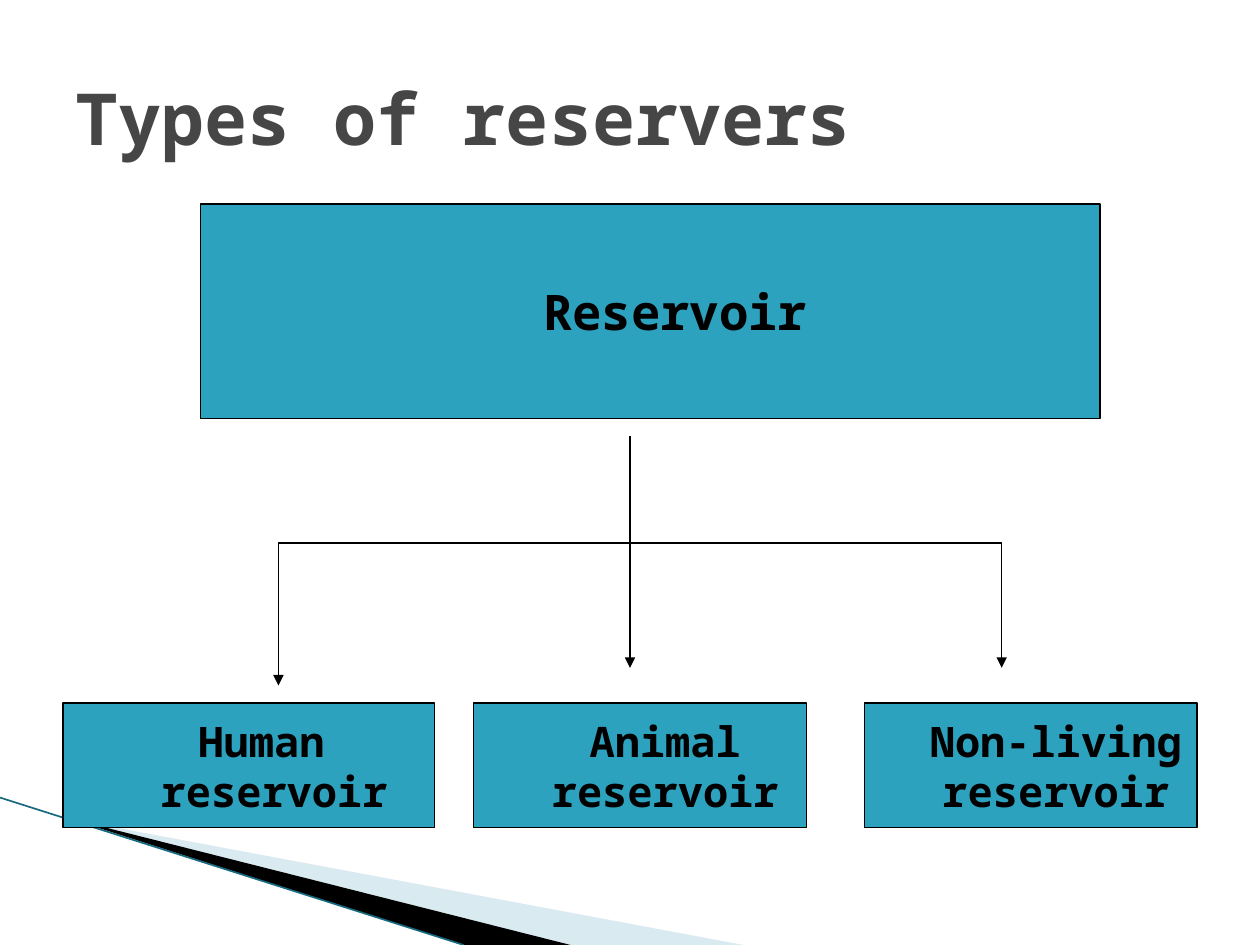
import pptx
import pptx.util
import pptx.dml.color
import pptx.enum.shapes
import pptx.enum.text
import pptx.oxml.ns
from dataclasses import dataclass
from lxml import etree

Inches = pptx.util.Inches
Pt = pptx.util.Pt
RGB = pptx.dml.color.RGBColor.from_string
Align = pptx.enum.text.PP_ALIGN
Anchor = pptx.enum.text.MSO_ANCHOR
qn = pptx.oxml.ns.qn


@dataclass(frozen=True)
class Theme:
    face: str = "Noto Sans Mono"
    title: str = "464646"
    ink: str = "000000"
    box: str = "2DA2BF"
    pale: str = "A0CBDC"
    edge: str = "17697F"
    big: int = 41
    mid: int = 28
    small: int = 24
    line: float = 0.75


THEME = Theme()


def style(frame, size, color, align):
    frame.vertical_anchor = Anchor.MIDDLE
    frame.word_wrap = True
    for para in frame.paragraphs:
        para.alignment = align
        for run in para.runs:
            run.font.name = THEME.face
            run.font.size = Pt(size)
            run.font.bold = True
            run.font.color.rgb = RGB(color)


def add_title(slide, text):
    title = slide.shapes.title
    title.left, title.top = Inches(0.5), Inches(0.3)
    title.width, title.height = Inches(9), Inches(1.25)
    title.text_frame.text = text
    style(title.text_frame, THEME.big, THEME.title, Align.LEFT)


def add_box(slide, left, top, width, height, text, size):
    box = slide.shapes.add_shape(
        pptx.enum.shapes.MSO_SHAPE.RECTANGLE,
        Inches(left), Inches(top), Inches(width), Inches(height))
    box.shadow.inherit = False
    box.fill.solid()
    box.fill.fore_color.rgb = RGB(THEME.box)
    box.line.color.rgb = RGB(THEME.ink)
    box.line.width = Pt(THEME.line)
    frame = box.text_frame
    # The labels sit 0.2 inch right of the box centre
    frame.margin_left, frame.margin_right = Inches(0.4), 0
    frame.text = text
    style(frame, size, THEME.ink, Align.CENTER)


def add_line(slide, start, end, color=THEME.ink, width=THEME.line, arrow=False):
    line = slide.shapes.add_connector(
        pptx.enum.shapes.MSO_CONNECTOR.STRAIGHT,
        *(Inches(n) for n in start + end))
    line.line.color.rgb = RGB(color)
    line.line.width = Pt(width)
    if arrow:
        etree.SubElement(line.line._get_or_add_ln(), qn("a:tailEnd"),
                         type="triangle")
    etree.SubElement(line._element.spPr, qn("a:effectLst"))


def add_wedge(slide, points, color, alpha=100):
    spots = [(Inches(x), Inches(y)) for x, y in points]
    build = slide.shapes.build_freeform(*spots[0])
    build.add_line_segments(spots[1:], close=True)
    wedge = build.convert_to_shape()
    wedge.shadow.inherit = False
    wedge.fill.solid()
    wedge.fill.fore_color.rgb = RGB(color)
    wedge.line.fill.background()
    if alpha < 100:
        tint = wedge._element.spPr.find(".//" + qn("a:srgbClr"))
        etree.SubElement(tint, qn("a:alpha"), val=str(alpha * 1000))


def main():
    deck = pptx.Presentation()
    deck.slide_width, deck.slide_height = Inches(10), Inches(7.5)
    slide = deck.slides.add_slide(deck.slide_layouts[5])

    # Corner wedges
    add_wedge(slide, [(0.55, 6.5), (5.9, 7.5), (4.53, 7.5)], THEME.pale, 40)
    add_wedge(slide, [(0.53, 6.49), (4.53, 7.5), (3.68, 7.5)], THEME.ink)
    add_line(slide, (0, 6.33), (3.68, 7.5), THEME.edge, 0.95)

    add_title(slide, "Types of reservers")

    # Root of the tree
    add_box(slide, 1.59, 1.62, 7.14, 1.7, "Reservoir", THEME.mid)

    # Branches: trunk, crossbar and one arrow per kind
    fork = 4.31
    tips = [(2.21, 5.44), (5, 5.3), (7.95, 5.3)]
    add_line(slide, (5, 3.46), (5, fork))
    add_line(slide, (tips[0][0], fork), (tips[-1][0], fork))
    for tip in tips:
        add_line(slide, (tip[0], fork), tip, arrow=True)

    # Kinds of reservoir
    kinds = [("Human ", 0.5, 2.95), ("Animal", 3.76, 2.64),
             ("Non-living", 6.86, 2.64)]
    for name, left, width in kinds:
        add_box(slide, left, 5.58, width, 0.99, name + "\nreservoir",
                THEME.small)

    deck.save("out.pptx")


if __name__ == "__main__":
    main()
